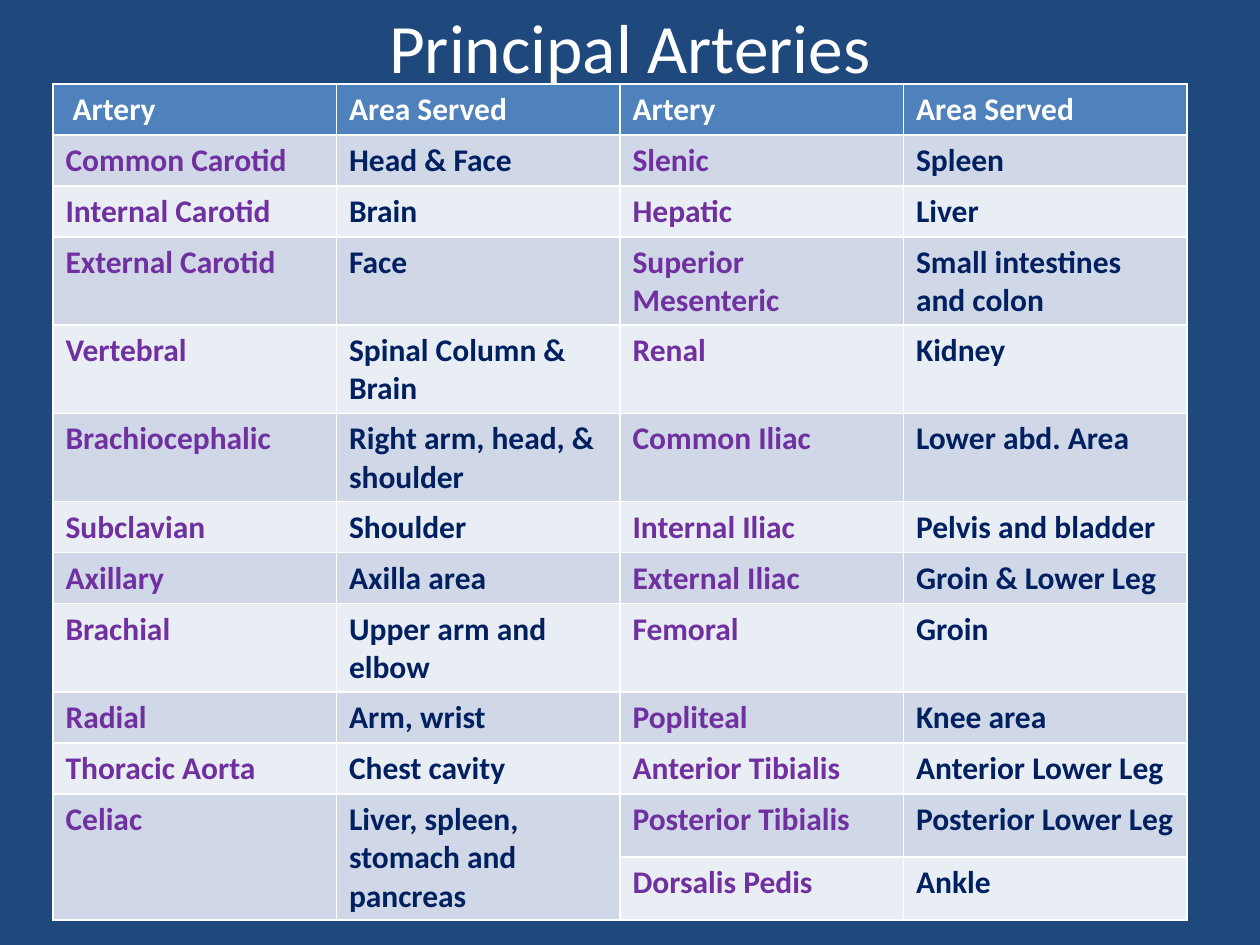
from pptx import Presentation
from pptx.dml.color import RGBColor
from pptx.enum.text import MSO_ANCHOR, PP_ALIGN
from pptx.util import Pt

SCALE = 914400 / 126
HUES = {
    "back": "1F497D", "white": "FFFFFF", "head": "4F81BD",
    "odd": "D0D8E8", "even": "E9EDF4",
    "artery": "7030A0", "area": "002060",
}
HEADS = [" Artery", "Area Served", "Artery", "Area Served"]
ROWS = [
    ["Common Carotid", "Head & Face", "Slenic", "Spleen"],
    ["Internal Carotid", "Brain", "Hepatic", "Liver"],
    ["External Carotid", "Face", "Superior Mesenteric", "Small intestines and colon"],
    ["Vertebral", "Spinal Column & Brain", "Renal", "Kidney"],
    ["Brachiocephalic", "Right arm, head, & shoulder", "Common Iliac", "Lower abd. Area"],
    ["Subclavian", "Shoulder", "Internal Iliac", "Pelvis and bladder"],
    ["Axillary", "Axilla area", "External Iliac", "Groin & Lower Leg"],
    ["Brachial", "Upper arm and elbow", "Femoral", "Groin"],
    ["Radial", "Arm, wrist", "Popliteal", "Knee area"],
    ["Thoracic Aorta", "Chest cavity", "Anterior Tibialis", "Anterior Lower Leg"],
    ["Celiac", "Liver, spleen, stomach and pancreas", "Posterior Tibialis", "Posterior Lower Leg"],
    ["", "", "Dorsalis Pedis", "Ankle"],
]


def px(count):
    return round(count * SCALE)


def hue(name):
    return RGBColor.from_string(HUES[name])


def paint(fill, name):
    fill.solid()
    fill.fore_color.rgb = hue(name)


def write(para, text, size, color, bold=False):
    run = para.add_run()
    run.text = text
    style = {"name": "Calibri", "size": Pt(size), "bold": bold}
    for key, value in style.items():
        setattr(run.font, key, value)
    run.font.color.rgb = hue(color)


def add_title(slide, text):
    box = slide.shapes.add_textbox(px(63), px(10), px(1134), px(63))
    frame = box.text_frame
    form = {
        "word_wrap": True, "vertical_anchor": MSO_ANCHOR.MIDDLE,
        "margin_top": px(9), "margin_bottom": 0,
    }
    for key, value in form.items():
        setattr(frame, key, value)
    para = frame.paragraphs[0]
    para.alignment = PP_ALIGN.CENTER
    write(para, text, 39.6, "white")


def fill_cell(cell, text, back, color):
    paint(cell.fill, back)
    if text:
        write(cell.text_frame.paragraphs[0], text, 18, color, True)


def add_grid(slide):
    lines = [HEADS] + ROWS
    frame = slide.shapes.add_table(
        len(lines), len(HEADS), px(53), px(84), px(1134), px(837))
    table = frame.table
    for row, line in enumerate(lines):
        table.rows[row].height = px(63 if row > 10 else 51)
        back = "odd" if row % 2 else "even"
        for col, text in enumerate(line):
            color = "area" if col % 2 else "artery"
            look = (back, color) if row else ("head", "white")
            fill_cell(table.cell(row, col), text, *look)
    last = len(ROWS)
    for col in range(2):
        table.cell(last - 1, col).merge(table.cell(last, col))
    frame.height = px(837)


def main():
    deck = Presentation()
    deck.slide_width, deck.slide_height = px(1260), px(945)
    slide = deck.slides.add_slide(deck.slide_layouts[6])
    paint(slide.background.fill, "back")
    add_title(slide, "Principal Arteries")
    add_grid(slide)
    deck.save("out.pptx")


if __name__ == "__main__":
    main()
